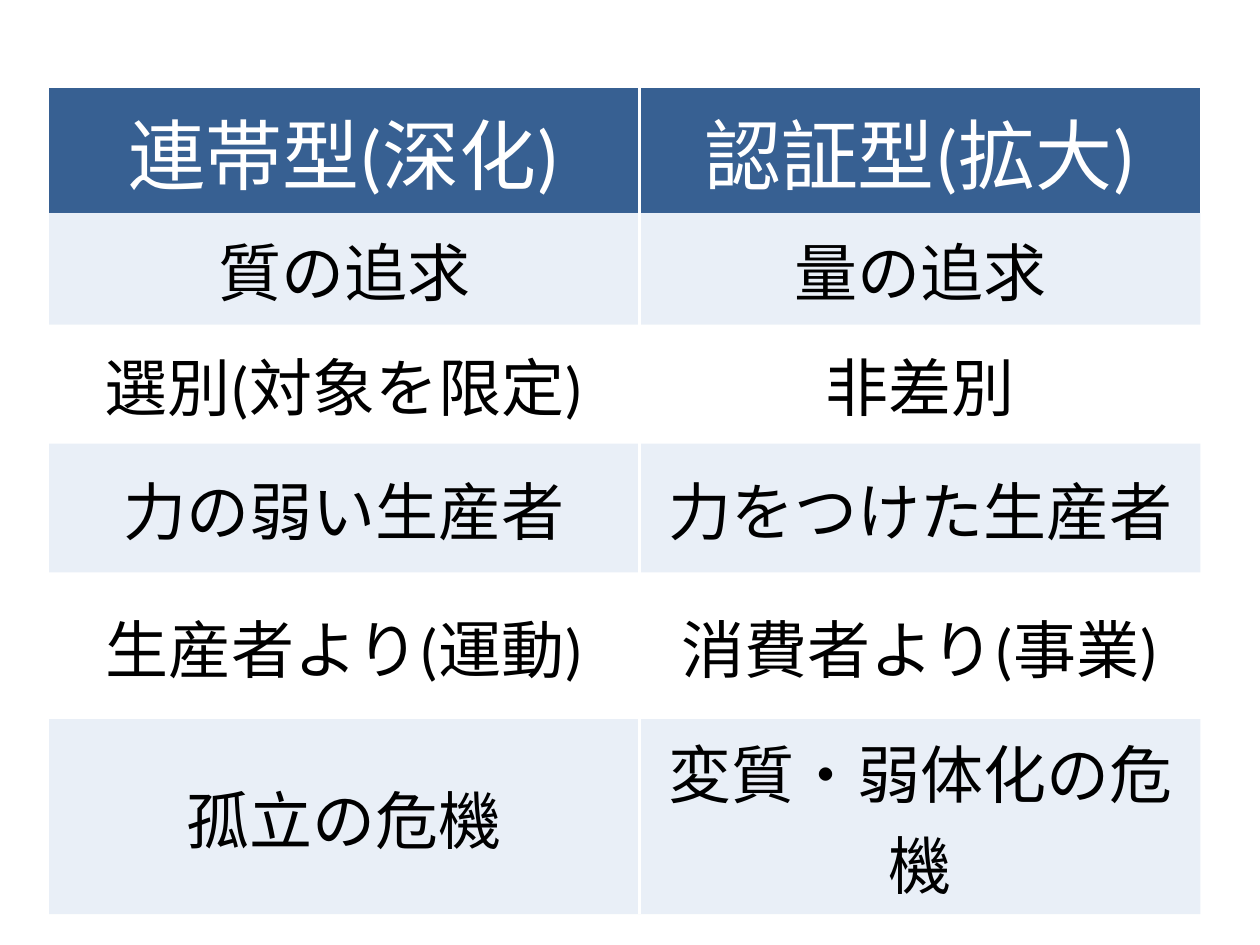
"""Build a slide comparing the solidarity and certification models."""
from lxml import etree
from pptx import Presentation
from pptx.dml.color import RGBColor
from pptx.enum.text import MSO_ANCHOR, PP_ALIGN
from pptx.oxml.ns import qn
from pptx.util import Pt

CENTER = PP_ALIGN.CENTER
TOP, MIDDLE = MSO_ANCHOR.TOP, MSO_ANCHOR.MIDDLE
BLANK_LAYOUT = 6
PLAIN_TABLE_STYLE = "{2D5ABB26-0587-4C30-8999-92F81FD0307C}"

COLORS = {"header": "376092", "band": "95B3D7", "white": "FFFFFF", "text": "000000"}
HEADER = {"size": 44, "color": "white", "anchor": TOP}
BODY = {"size": 36, "color": "text", "anchor": MIDDLE}

COLUMN_WIDTHS = [337.5, 320.5]
ROW_HEIGHTS = [55, 64, 68, 73.5, 84, 78.5]
ROWS = [
    ("連帯型(深化)", "認証型(拡大)"),
    ("質の追求", "量の追求"),
    ("選別(対象を限定)", "非差別"),
    ("力の弱い生産者", "力をつけた生産者"),
    ("生産者より(運動)", "消費者より(事業)"),
    ("孤立の危機", "変質・弱体化の危機"),
]


class SlideBuilder:
    def __init__(self, slide, font_name="Calibri", border_width=1.5):
        self.slide = slide
        self.font_name = font_name
        self.border_width = border_width

    def table(self, left, top, widths, heights, rows):
        frame = self.slide.shapes.add_table(
            len(rows), len(widths), Pt(left), Pt(top), Pt(sum(widths)), Pt(sum(heights))
        )
        table = frame.table
        table.horz_banding = False
        frame._element.find(".//" + qn("a:tableStyleId")).text = PLAIN_TABLE_STYLE
        for column, width in zip(table.columns, widths):
            column.width = Pt(width)
        for row_index, (row, height, texts) in enumerate(zip(table.rows, heights, rows)):
            row.height = Pt(height)
            for column_index, (cell, text) in enumerate(zip(row.cells, texts)):
                self.cell_text(cell, text, BODY if row_index else HEADER)
                self.cell_fill(cell, row_index)
                self.cell_border(cell, "a:lnL" if column_index else "a:lnR")

    def cell_text(self, cell, text, style):
        cell.text = text
        cell.vertical_anchor = style["anchor"]
        paragraph = cell.text_frame.paragraphs[0]
        paragraph.alignment = CENTER
        font = paragraph.runs[0].font
        values = {"name": self.font_name, "size": Pt(style["size"]), "bold": False}
        for name, value in values.items():
            setattr(font, name, value)
        font.color.rgb = RGBColor.from_string(COLORS[style["color"]])

    def cell_fill(self, cell, row_index):
        if row_index and row_index % 2 == 0:
            cell.fill.background()
            return
        cell.fill.solid()
        color = COLORS["band" if row_index else "header"]
        cell.fill.fore_color.rgb = RGBColor.from_string(color)
        if row_index:
            color_element = cell._tc.tcPr.find(".//" + qn("a:srgbClr"))
            etree.SubElement(color_element, qn("a:alpha"), val="20000")

    def cell_border(self, cell, side):
        line = etree.Element(qn(side), w=str(Pt(self.border_width)))
        fill = etree.SubElement(line, qn("a:solidFill"))
        etree.SubElement(fill, qn("a:srgbClr"), val=COLORS["white"])
        cell._tc.tcPr.insert(0, line)


def main():
    presentation = Presentation()
    presentation.slide_width, presentation.slide_height = Pt(720), Pt(540)
    slide = presentation.slides.add_slide(presentation.slide_layouts[BLANK_LAYOUT])
    SlideBuilder(slide).table(28, 50.5, COLUMN_WIDTHS, ROW_HEIGHTS, ROWS)
    presentation.save("out.pptx")


if __name__ == "__main__":
    main()
